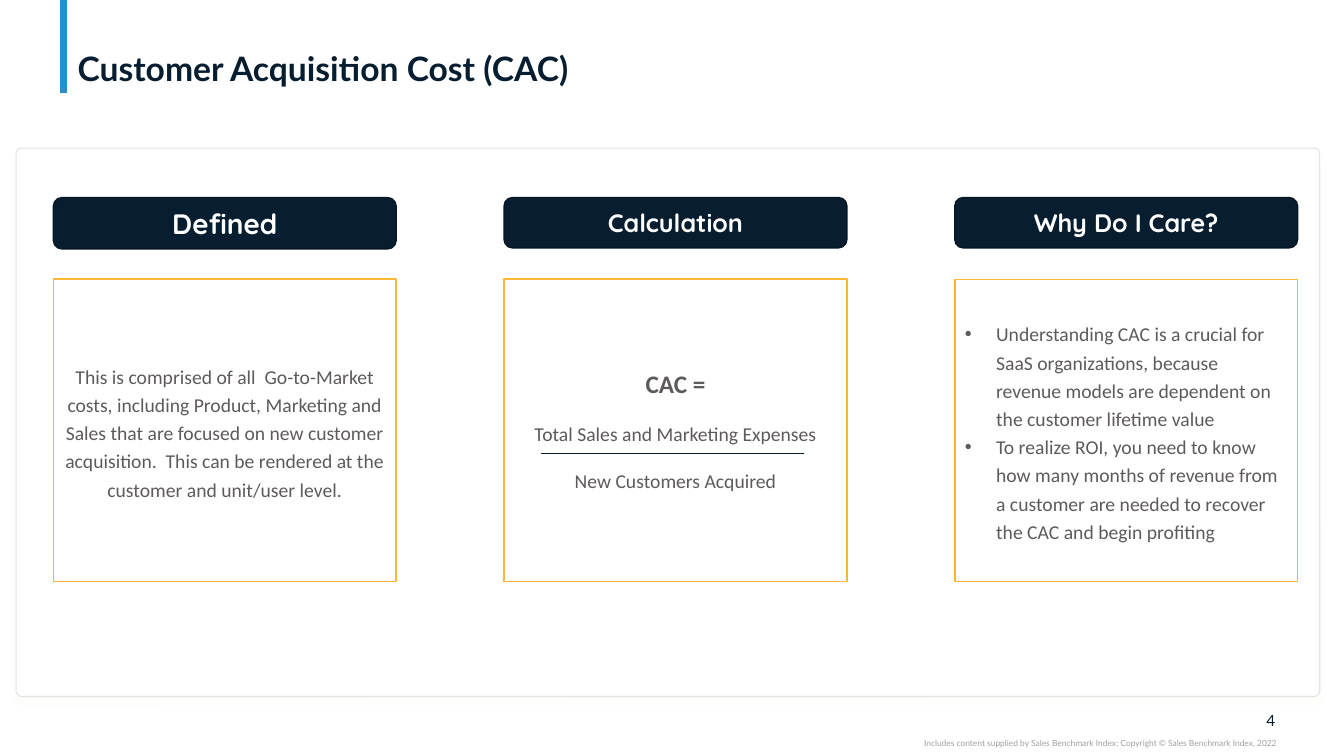
from lxml.etree import SubElement
from pptx import Presentation
from pptx.dml.color import RGBColor
from pptx.enum.shapes import MSO_CONNECTOR, MSO_SHAPE
from pptx.enum.text import MSO_ANCHOR, MSO_AUTO_SIZE, PP_ALIGN
from pptx.oxml.ns import qn
from pptx.util import Inches, Pt

NAVY = RGBColor(0x07, 0x1E, 0x31)
NAVY_EDGE = RGBColor(0x05, 0x16, 0x24)
BLUE = RGBColor(0x23, 0x91, 0xCF)
GOLD = RGBColor(0xF8, 0xB7, 0x37)
TEXT_GRAY = RGBColor(0x5F, 0x5A, 0x5A)
NOTE_GRAY = RGBColor(0xA0, 0xA0, 0xA0)
PANEL_EDGE = RGBColor(0xE0, 0xE3, 0xE6)
WHITE = RGBColor(0xFF, 0xFF, 0xFF)

COLUMN_LEFTS = [0.53 + 4.47 * column for column in range(3)]
COLUMN_WIDTH = 3.4
HEADER_TOP = 1.96
BOX_TOP, BOX_HEIGHT = 2.77, 3

TITLE = dict(name="Lato", size=Pt(24), bold=True, color=NAVY)
NUMBER = dict(name="Lato", size=Pt(11), color=NAVY)
NOTE = dict(name="Lato", size=Pt(6), color=NOTE_GRAY)
BODY = dict(name="Calibri", size=Pt(14), bold=False, color=TEXT_GRAY)
FORMULA = BODY | dict(size=Pt(18), bold=True)
HEADER = dict(name="Quicksand", bold=True, color=WHITE)

CENTERED = dict(alignment=PP_ALIGN.CENTER)
RIGHT = dict(alignment=PP_ALIGN.RIGHT)
LOOSE = dict(line_spacing=1.2, space_before=Pt(0))
GAP = CENTERED | dict(space_before=Pt(17))


def apply(target, values):
    for name, value in values.items():
        if name == "color":
            target.color.rgb = value
        else:
            setattr(target, name, value)


class SlideBuilder:
    def __init__(self, presentation):
        self.slide = presentation.slides.add_slide(presentation.slide_layouts[1])
        self.shapes = self.slide.shapes

    def place(self, shape, left, top, width, height):
        apply(shape, dict(left=Inches(left), top=Inches(top),
                          width=Inches(width), height=Inches(height)))

    def set_text(self, shape, lines, anchor=MSO_ANCHOR.MIDDLE, insets=(0.1, 0.05), bullet=False):
        """Fill a shape with (text, font values, paragraph values) lines."""
        frame = shape.text_frame
        side, edge = map(Inches, insets)
        apply(frame, dict(word_wrap=True, auto_size=MSO_AUTO_SIZE.NONE,
                          vertical_anchor=anchor, margin_left=side, margin_right=side,
                          margin_top=edge, margin_bottom=edge))
        for index, (text, font, layout) in enumerate(lines):
            paragraph = frame.add_paragraph() if index else frame.paragraphs[0]
            apply(paragraph, layout)
            if bullet:
                self.add_bullet(paragraph)
            paragraph.add_run().text = text
            apply(paragraph.runs[0].font, font)

    def add_bullet(self, paragraph):
        properties = paragraph._p.get_or_add_pPr()
        indent = Inches(0.31)
        properties.set("marL", str(indent))
        properties.set("indent", str(-indent))
        SubElement(properties, qn("a:buFont"), typeface="Arial")
        SubElement(properties, qn("a:buChar"), char="•")

    def outline(self, shape, fill, edge, weight):
        shape.fill.solid()
        shape.fill.fore_color.rgb = fill
        apply(shape.line, dict(width=Pt(weight), color=edge))

    def add_box(self, kind, place, fill, edge, weight=1):
        shape = self.shapes.add_shape(kind, *map(Inches, place))
        shape.shadow.inherit = False
        self.outline(shape, fill, edge, weight)
        return shape

    def add_panel(self, *place):
        panel = self.add_box(MSO_SHAPE.ROUNDED_RECTANGLE, place, WHITE, PANEL_EDGE, 0.75)
        panel.adjustments[0] = 0.01
        effects = panel._element.spPr.find(qn("a:effectLst"))
        shadow = SubElement(effects, qn("a:outerShdw"), blurRad=str(Pt(6)),
                            dist=str(Pt(4)), dir="5400000", algn="t", rotWithShape="0")
        color = SubElement(shadow, qn("a:srgbClr"), val=str(GOLD))
        SubElement(color, qn("a:alpha"), val="4000")

    def add_title(self, text, *place):
        title = self.shapes.title
        self.place(title, *place)
        layout = dict(alignment=PP_ALIGN.LEFT, line_spacing=0.9)
        self.set_text(title, [(text, TITLE, layout)], MSO_ANCHOR.BOTTOM, (0.1, 0))

    def add_header(self, left, text, size, height):
        place = (left, HEADER_TOP, COLUMN_WIDTH, height)
        header = self.add_box(MSO_SHAPE.ROUNDED_RECTANGLE, place, NAVY, NAVY_EDGE)
        self.set_text(header, [(text, HEADER | dict(size=Pt(size)), CENTERED)])

    def add_text_box(self, left, lines):
        place = (left, BOX_TOP, COLUMN_WIDTH, BOX_HEIGHT)
        self.set_text(self.add_box(MSO_SHAPE.RECTANGLE, place, WHITE, GOLD), lines)

    def add_list_box(self, left, items):
        body = self.slide.placeholders[1]
        self.place(body, left, BOX_TOP, COLUMN_WIDTH, BOX_HEIGHT)
        self.outline(body, WHITE, GOLD, 1)
        self.set_text(body, [(item, BODY, LOOSE) for item in items], bullet=True)
        # Bring the list in front of the panel
        self.shapes._spTree.append(body._element)

    def add_label(self, text, font, *place):
        label = self.shapes.add_textbox(*map(Inches, place))
        self.set_text(label, [(text, font, RIGHT)], insets=(0, 0))

    def add_line(self, start, end, color, weight):
        line = self.shapes.add_connector(MSO_CONNECTOR.STRAIGHT, *map(Inches, start + end))
        apply(line.line, dict(color=color, width=Pt(weight)))
        SubElement(line._element.spPr, qn("a:effectLst"))


def main():
    presentation = Presentation()
    presentation.slide_width = Inches(13.33)
    presentation.slide_height = Inches(7.5)
    builder = SlideBuilder(presentation)

    builder.add_line((0.63, 0), (0.63, 0.92), BLUE, 5)
    builder.add_label("4", NUMBER, 12.32, 7.05, 0.33, 0.19)
    builder.add_label(
        "Includes content supplied by Sales Benchmark Index; "
        "Copyright © Sales Benchmark Index, 2022", NOTE, 7.5, 7.32, 5.16, 0.1)
    builder.add_title("Customer Acquisition Cost (CAC)", 0.67, 0.04, 11.99, 0.84)
    builder.add_panel(0.16, 1.47, 12.93, 5.44)

    headers = [("Defined", 20, 0.51), ("Calculation", 18, 0.5), ("Why Do I Care?", 18, 0.5)]
    for left, header in zip(COLUMN_LEFTS, headers):
        builder.add_header(left, *header)

    defined, calculation, reasons = COLUMN_LEFTS
    builder.add_text_box(defined, [(
        "This is comprised of all  Go-to-Market costs, including Product, Marketing "
        "and Sales that are focused on new customer acquisition.  This can be "
        "rendered at the customer and unit/user level.", BODY, CENTERED | LOOSE)])
    builder.add_text_box(calculation, [
        ("CAC =", FORMULA, CENTERED),
        ("Total Sales and Marketing Expenses", BODY, GAP),
        ("New Customers Acquired", BODY, GAP)])
    builder.add_list_box(reasons, [
        "Understanding CAC is a crucial for SaaS organizations, because revenue "
        "models are dependent on the customer lifetime value",
        "To realize ROI, you need to know how many months of revenue from a "
        "customer are needed to recover the CAC and begin profiting"])
    builder.add_line((5.37, 4.5), (7.97, 4.5), NAVY, 0.25)

    presentation.save("out.pptx")


if __name__ == "__main__":
    main()
